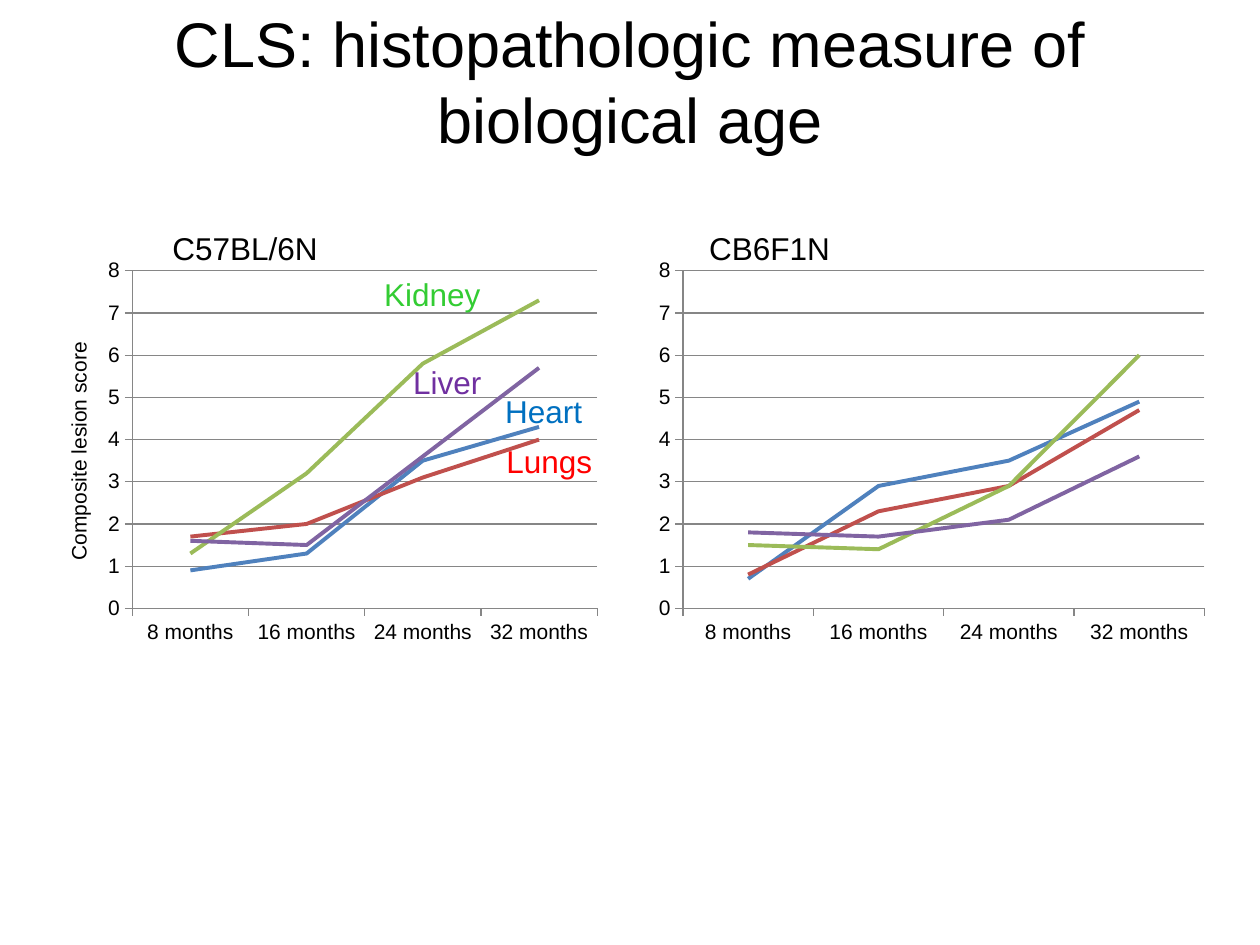
import pptx
import pptx.util
import pptx.chart.data
import pptx.dml.color
import pptx.enum.chart
import pptx.enum.text
import pptx.oxml
import pptx.oxml.ns

Inches = pptx.util.Inches
Pt = pptx.util.Pt

HUES = {
    "ink": "000000", "grid": "868686",
    "heart": "4F81BD", "lungs": "C0504D", "kidney": "9BBB59", "liver": "8064A2",
    "Heart": "0070C0", "Lungs": "FF0000", "Kidney": "33CC33", "Liver": "7030A0",
}
LINES = ("heart", "lungs", "kidney", "liver")
MONTHS = ("8 months", "16 months", "24 months", "32 months")
SIZE = (4.5, 3.19)
MOUSE_A = ((0.9, 1.3, 3.5, 4.3), (1.7, 2, 3.1, 4), (1.3, 3.2, 5.8, 7.3), (1.6, 1.5, 3.6, 5.7))
MOUSE_B = ((0.7, 2.9, 3.5, 4.9), (0.8, 2.3, 2.9, 4.7), (1.5, 1.4, 2.9, 6), (1.8, 1.7, 2.1, 3.6))
TAGS = (("Kidney", 2.62, 0.14, 0.97), ("Liver", 2.85, 0.84, 0.75),
        ("Lungs", 3.59, 1.47, 0.89), ("Heart", 3.58, 1.07, 0.82))


def tint(name):
    """Return the named colour."""
    return pptx.dml.color.RGBColor.from_string(HUES[name])


def style(font, size, hue="ink"):
    """Set face, size and colour of a font."""
    font.name = "Arial"
    font.size = Pt(size)
    font.bold = False
    font.color.rgb = tint(hue)


def write(slide, text, box, size=18, hue="ink", wrap=False, align="LEFT", anchor="TOP"):
    """Add a text box with one formatted paragraph."""
    frame = slide.shapes.add_textbox(*map(Inches, box)).text_frame
    frame.word_wrap = wrap
    frame.vertical_anchor = getattr(pptx.enum.text.MSO_ANCHOR, anchor)
    para = frame.paragraphs[0]
    para.alignment = getattr(pptx.enum.text.PP_ALIGN, align)
    run = para.add_run()
    run.text = text
    style(run.font, size, hue)


def pin(chart, left, top, width, height):
    """Fix the inner plot area as fractions of the chart."""
    marks = {"layoutTarget": "inner", "xMode": "edge", "yMode": "edge",
             "x": left, "y": top, "w": width, "h": height}
    inner = "".join(f'<c:{key} val="{val}"/>' for key, val in marks.items())
    space = pptx.oxml.ns.nsdecls("c")
    plan = pptx.oxml.parse_xml(
        f"<c:layout {space}><c:manualLayout>{inner}</c:manualLayout></c:layout>")
    area = chart.element.chart.plotArea
    for old in area.findall(pptx.oxml.ns.qn("c:layout")):
        area.remove(old)
    area.insert(0, plan)


def plot(slide, box, rows, inner, title=None):
    """Add a line chart of lesion scores by age."""
    data = pptx.chart.data.CategoryChartData()
    data.categories = MONTHS
    for index, row in enumerate(rows, 1):
        data.add_series(f"Series {index}", row)
    kind = pptx.enum.chart.XL_CHART_TYPE.LINE
    chart = slide.shapes.add_chart(kind, *map(Inches, box), data).chart
    chart.has_legend = False
    chart.has_title = False
    style(chart.font, 12)
    chart.plots[0].vary_by_categories = False
    for series, hue in zip(chart.plots[0].series, LINES):
        series.smooth = False
        series.marker.style = pptx.enum.chart.XL_MARKER_STYLE.NONE
        series.format.line.color.rgb = tint(hue)
        series.format.line.width = Pt(2.25)
    score = chart.value_axis
    score.minimum_scale, score.maximum_scale, score.major_unit = 0, 8, 1
    score.has_major_gridlines = True
    for part in (score, chart.category_axis, score.major_gridlines):
        part.format.line.color.rgb = tint("grid")
        part.format.line.width = Pt(0.75)
    for axis in (score, chart.category_axis):
        axis.major_tick_mark = pptx.enum.chart.XL_TICK_MARK.OUTSIDE
        axis.minor_tick_mark = pptx.enum.chart.XL_TICK_MARK.NONE
        style(axis.tick_labels.font, 12)
    if title:
        run = score.axis_title.text_frame.paragraphs[0].add_run()
        run.text = title
        style(run.font, 12)
    pin(chart, *inner)


def panel(slide, left, top, name, shift, width, rows, inner, title=None, tags=()):
    """Place one strain: chart, heading and organ tags."""
    plot(slide, (left, top, *SIZE), rows, inner, title)
    for tag, across, down, span in tags:
        write(slide, tag, (left + across, top + down, span, 0.4), hue=tag)
    write(slide, name, (left + shift, top - 0.22, width, 0.4))


def main():
    """Build the slide and save it."""
    deck = pptx.Presentation()
    deck.slide_width, deck.slide_height = Inches(10), Inches(7.5)
    slide = deck.slides.add_slide(deck.slide_layouts[6])
    write(slide, "CLS: histopathologic measure of biological age", (0.5, 0.01, 9, 1.25),
          size=36, wrap=True, align="CENTER", anchor="MIDDLE")
    panel(slide, 0.33, 1.99, "C57BL/6N", 0.94, 1.37, MOUSE_A, (0.16, 0.05, 0.82, 0.84),
          "Composite lesion score", TAGS)
    panel(slide, 5.15, 1.99, "CB6F1N", 0.38, 1.17, MOUSE_B, (0.06, 0.05, 0.92, 0.84))
    deck.save("out.pptx")


if __name__ == "__main__":
    main()
